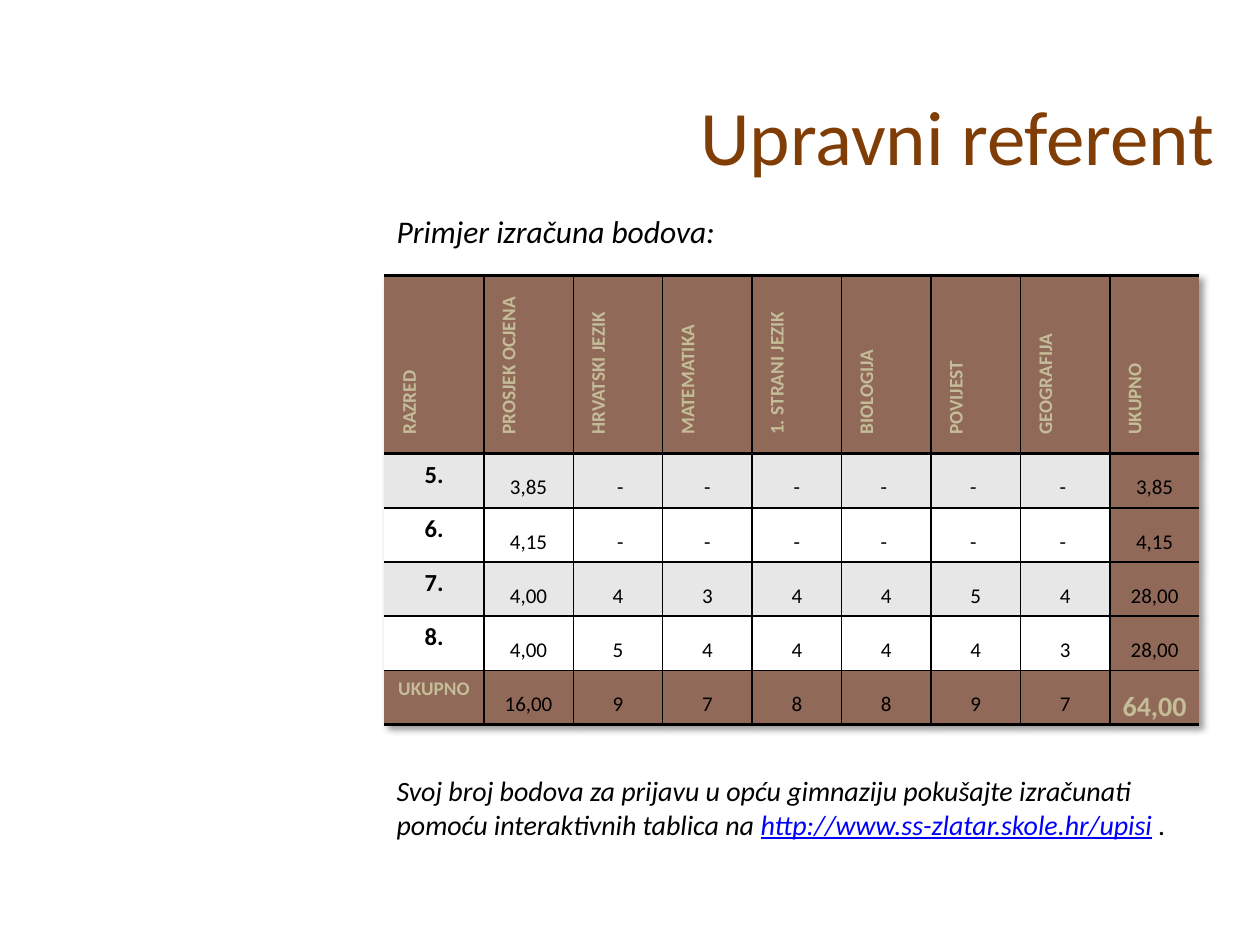
import dataclasses

import pptx
import pptx.dml.color
import pptx.enum.text
import pptx.oxml
import pptx.oxml.ns
import pptx.util
from lxml import etree


@dataclasses.dataclass(frozen=True)
class Theme:
    font: str = "Calibri"
    title: str = "803D06"
    text: str = "000000"
    link: str = "0000FF"
    brown: str = "916959"
    sand: str = "C4BD97"
    stripes: tuple = ("FFFFFF", "E7E7E7")
    title_size: int = 44
    intro_size: int = 18
    note_size: int = 16
    total_size: int = 16
    grade_size: int = 14
    value_size: int = 12
    label_size: int = 11


theme = Theme()
ALIGN = pptx.enum.text.PP_ALIGN
ANCHOR = pptx.enum.text.MSO_ANCHOR


def style_font(font, size, color, bold=False, italic=False):
    font.name = theme.font
    font.size = pptx.util.Pt(size)
    font.bold = bold
    font.italic = italic
    font.color.rgb = pptx.dml.color.RGBColor.from_string(color)


def add_text(left, top, width, height, parts, size, italic=True):
    """Add a wrapping text box from (wording, colour) parts; the frame is in inches."""
    frame = slide.shapes.add_textbox(*map(pptx.util.Inches, (left, top, width, height))).text_frame
    frame.word_wrap = True
    for wording, color in parts:
        run = frame.paragraphs[0].add_run()
        run.text = wording
        style_font(run.font, size, color, italic=italic)
        run.font.underline = color == theme.link
    return frame


prs = pptx.Presentation()
prs.slide_width = pptx.util.Inches(10)
prs.slide_height = pptx.util.Inches(7.5)
slide = prs.slides.add_slide(prs.slide_layouts[6])

# Grid of the points table, in inches
LEFT, TOP = 3.05, 2.19
COLUMNS = [0.79] + [0.71] * 8
ROWS = [1.41] + [0.43] * 5
WIDTH, HEIGHT = sum(COLUMNS), sum(ROWS)

points = [
    ["RAZRED", "PROSJEK OCJENA", "HRVATSKI JEZIK", "MATEMATIKA", "1. STRANI JEZIK",
     "BIOLOGIJA", "POVIJEST", "GEOGRAFIJA", "UKUPNO"],
    ["5.", "3,85", " -", "-", "-", "- ", "- ", "- ", "3,85"],
    ["6.", "4,15", " -", "-", "-", "- ", "- ", "- ", "4,15"],
    ["7.", "4,00", "4", "3", "4", "4", "5", "4", "28,00"],
    ["8.", "4,00", "5", "4", "4", "4", "4", "3", "28,00"],
    ["UKUPNO", "16,00", "9", "7", "8", "8", "9", "7", "64,00"],
]
last_row, last_column = len(ROWS) - 1, len(COLUMNS) - 1

points_frame = slide.shapes.add_table(
    len(ROWS), len(COLUMNS), *map(pptx.util.Inches, (LEFT, TOP, WIDTH, HEIGHT)))
table = points_frame.table
for column, width in zip(table.columns, COLUMNS):
    column.width = pptx.util.Inches(width)
for row, height in zip(table.rows, ROWS):
    row.height = pptx.util.Inches(height)

table_shadow = pptx.oxml.parse_xml(
    f'<a:effectLst {pptx.oxml.ns.nsdecls("a")}>'
    '<a:outerShdw blurRad="50800" dist="38100" dir="2700000" algn="tl" rotWithShape="0">'
    '<a:prstClr val="black"><a:alpha val="40000"/></a:prstClr></a:outerShdw></a:effectLst>')
table._tbl.tblPr.insert(0, table_shadow)

for r, values in enumerate(points):
    for c, wording in enumerate(values):
        cell = table.cell(r, c)
        cell_properties = cell._tc.get_or_add_tcPr()
        header, total, grade = r == 0, r == last_row, c == 0

        # Open at the left and right, heavy above and below the header and the total
        borders = {
            "lnL": 0 if grade else 1,
            "lnR": 0 if c == last_column else 1,
            "lnT": 2 if r <= 1 else 1,
            "lnB": 2 if header or total else 1,
        }
        for side, weight in borders.items():
            line = etree.SubElement(cell_properties, pptx.oxml.ns.qn(f"a:{side}"))
            if weight:
                line.set("w", str(pptx.util.Pt(weight)))
                paint = etree.SubElement(line, pptx.oxml.ns.qn("a:solidFill"))
                etree.SubElement(paint, pptx.oxml.ns.qn("a:srgbClr"), val=theme.text)
            else:
                etree.SubElement(line, pptx.oxml.ns.qn("a:noFill"))

        framed = header or total or c == last_column
        cell.fill.solid()
        cell.fill.fore_color.rgb = pptx.dml.color.RGBColor.from_string(
            theme.brown if framed else theme.stripes[r % 2])

        cell.text_frame.text = wording
        paragraph = cell.text_frame.paragraphs[0]
        paragraph.alignment = ALIGN.CENTER
        if header or not grade:
            cell.vertical_anchor = ANCHOR.MIDDLE
            cell.margin_left = cell.margin_right = pptx.util.Inches(0.07)
            cell.margin_top = pptx.util.Inches(0.01)
            cell.margin_bottom = 0
            paragraph.line_spacing = 1.5
        if header:
            cell_properties.set("vert", "vert270")
            paragraph.alignment = ALIGN.JUSTIFY
            paragraph._p.get_or_add_pPr().set("marL", str(pptx.util.Inches(0.08)))

        if header or (total and grade):
            look = theme.label_size, theme.sand, True
        elif total and c == last_column:
            look = theme.total_size, theme.sand, True
        elif grade:
            look = theme.grade_size, theme.text, True
        else:
            look = theme.value_size, theme.text, False
        style_font(paragraph.runs[0].font, *look)

add_text(LEFT, 1.63, 3.2, 0.4, [("Primjer izračuna bodova:", theme.text)], theme.intro_size)
add_text(LEFT, 6.09, WIDTH, 0.64, [
    ("Svoj broj bodova za prijavu u opću gimnaziju pokušajte izračunati "
     "pomoću interaktivnih tablica na ", theme.text),
    ("http://www.ss-zlatar.skole.hr/upisi", theme.link),
    (" .", theme.text),
], theme.note_size)

title = add_text(3.19, 0.44, 6.55, 1.25, [("Upravni referent", theme.title)],
                 theme.title_size, italic=False)
title.vertical_anchor = ANCHOR.MIDDLE
title.paragraphs[0].alignment = ALIGN.RIGHT

prs.save("out.pptx")
